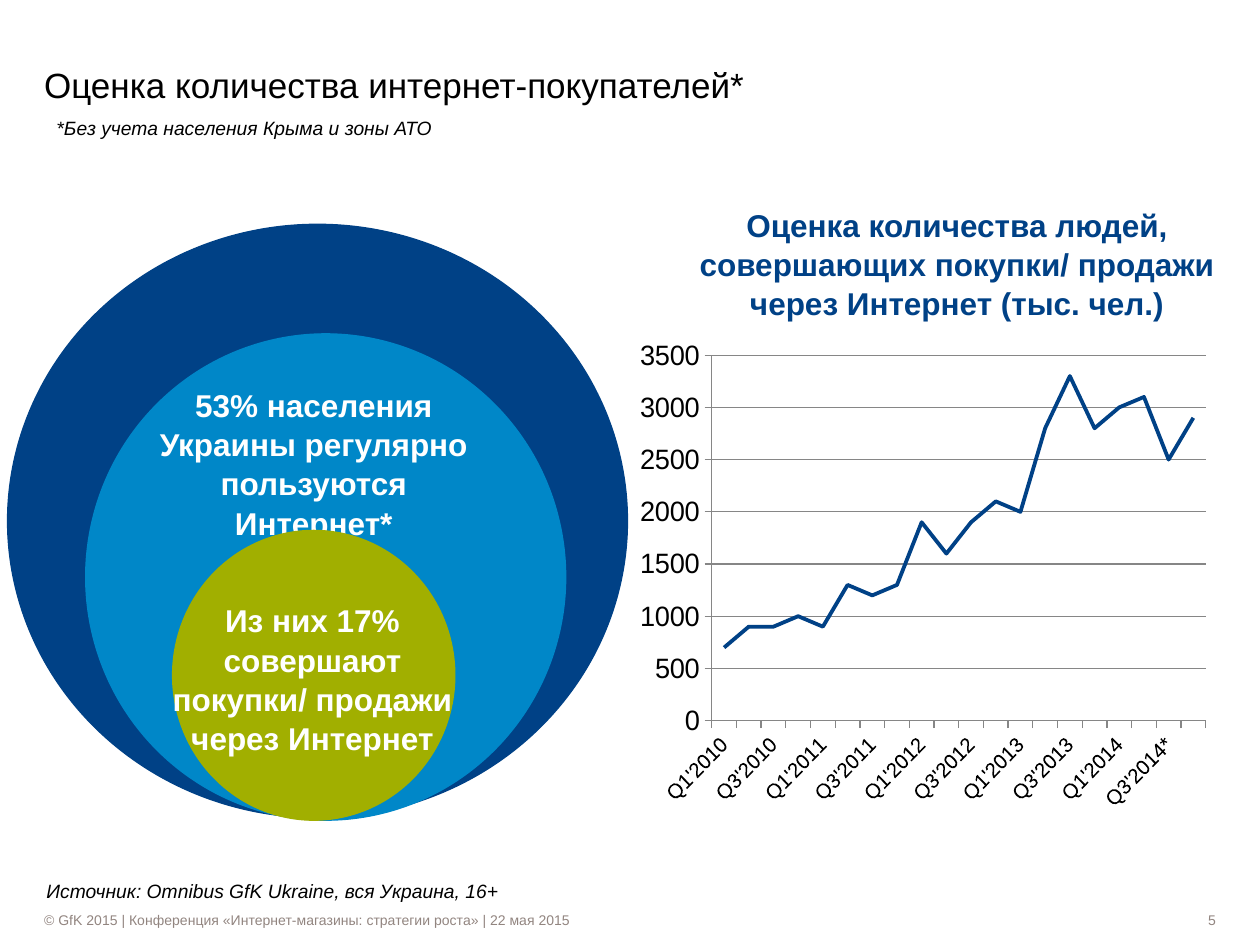
import pptx
import pptx.chart.data
import pptx.dml.color
import pptx.enum.chart
import pptx.enum.shapes
import pptx.enum.text
import pptx.oxml
import pptx.oxml.ns
import pptx.util
from pptx.util import Inches

RGBColor = pptx.dml.color.RGBColor
NAVY = RGBColor(0x00, 0x41, 0x86)
BLUE = RGBColor(0x00, 0x87, 0xC8)
GREEN = RGBColor(0xA1, 0xAF, 0x00)
GREY = RGBColor(0x92, 0x85, 0x80)
AXIS_GREY = RGBColor(0x86, 0x86, 0x86)
BLACK = RGBColor(0, 0, 0)
WHITE = RGBColor(0xFF, 0xFF, 0xFF)

ALIGN = pptx.enum.text.PP_ALIGN
ANCHOR = pptx.enum.text.MSO_ANCHOR

BUYERS = [700, 900, 900, 1000, 900, 1300, 1200, 1300, 1900, 1600,
          1900, 2100, 2000, 2800, 3300, 2800, 3000, 3100, 2500, 2900]
MARKED_QUARTERS = ("Q2'2014", "Q3'2014", "Q4'2014")


def set_font(font, size, color):
    font.name = "Arial"
    font.size = pptx.util.Pt(size)
    font.color.rgb = color


def add_text(slide, box, text, size, color, align=ALIGN.LEFT, anchor=ANCHOR.TOP,
             bold=False, italic=False, margins=(0, 0), line_spacing=None):
    shape = slide.shapes.add_textbox(*map(Inches, box))
    frame = shape.text_frame
    frame.word_wrap = True
    frame.vertical_anchor = anchor
    frame.margin_left = frame.margin_right = Inches(margins[0])
    frame.margin_top = frame.margin_bottom = Inches(margins[1])
    paragraph = frame.paragraphs[0]
    paragraph.text = text
    paragraph.alignment = align
    paragraph.line_spacing = line_spacing
    set_font(paragraph.font, size, color)
    paragraph.font.bold = bold
    paragraph.font.italic = italic


def add_heading(slide, box, text, color):
    add_text(slide, box, text, 18, color, ALIGN.CENTER, bold=True, line_spacing=1.04)


def add_note(slide, box, text):
    add_text(slide, box, text, 11, BLACK, italic=True, margins=(0.1, 0.05))


def add_circle(slide, box, color):
    shape = slide.shapes.add_shape(pptx.enum.shapes.MSO_SHAPE.OVAL, *map(Inches, box))
    shape.shadow.inherit = False
    shape.fill.solid()
    shape.fill.fore_color.rgb = color
    shape.line.color.rgb = color
    shape.line.width = pptx.util.Pt(0.75)


def style_axis(axis, size):
    axis.major_tick_mark = pptx.enum.chart.XL_TICK_MARK.OUTSIDE
    axis.minor_tick_mark = pptx.enum.chart.XL_TICK_MARK.NONE
    axis.format.line.color.rgb = AXIS_GREY
    set_font(axis.tick_labels.font, size, BLACK)


def set_plot_layout(chart, left, top, width, height):
    namespace = pptx.oxml.ns.nsdecls("c")
    layout = pptx.oxml.parse_xml(
        f'<c:layout {namespace}><c:manualLayout><c:layoutTarget val="inner"/>'
        '<c:xMode val="edge"/><c:yMode val="edge"/>'
        f'<c:x val="{left}"/><c:y val="{top}"/><c:w val="{width}"/><c:h val="{height}"/>'
        '</c:manualLayout></c:layout>')
    plot_area = chart._chartSpace.chart.plotArea
    for existing in plot_area.findall(pptx.oxml.ns.qn("c:layout")):
        plot_area.remove(existing)
    plot_area.insert(0, layout)


def label_every_second_category(axis):
    skip = pptx.oxml.parse_xml(
        f'<c:tickLblSkip {pptx.oxml.ns.nsdecls("c")} val="2"/>')
    axis._element.find(pptx.oxml.ns.qn("c:noMultiLvlLbl")).addprevious(skip)
    body = axis._element.find(pptx.oxml.ns.qn("c:txPr")).find(pptx.oxml.ns.qn("a:bodyPr"))
    body.set("rot", "-2700000")
    body.set("vert", "horz")


def add_buyers_chart(slide, box):
    data = pptx.chart.data.CategoryChartData()
    quarters = [f"Q{quarter}'{year}" for year in range(2010, 2015) for quarter in range(1, 5)]
    data.categories = [name + "*" if name in MARKED_QUARTERS else name for name in quarters]
    data.add_series("Series 1", BUYERS)
    chart = slide.shapes.add_chart(
        pptx.enum.chart.XL_CHART_TYPE.LINE, *map(Inches, box), data).chart
    chart.has_legend = False
    chart.has_title = False
    set_font(chart.font, 18, BLACK)
    chart.plots[0].vary_by_categories = False
    series = chart.plots[0].series[0]
    series.smooth = False
    series.marker.style = pptx.enum.chart.XL_MARKER_STYLE.NONE
    series.format.line.color.rgb = NAVY
    series.format.line.width = pptx.util.Pt(2.25)

    style_axis(chart.category_axis, 12)
    label_every_second_category(chart.category_axis)
    value_axis = chart.value_axis
    style_axis(value_axis, 16)
    value_axis.minimum_scale = 0
    value_axis.maximum_scale = 3500
    value_axis.major_unit = 500
    value_axis.has_major_gridlines = True
    value_axis.major_gridlines.format.line.color.rgb = AXIS_GREY
    set_plot_layout(chart, 0.09, 0.065, 0.82, 0.652)


def main():
    presentation = pptx.Presentation()
    presentation.slide_width = Inches(10)
    presentation.slide_height = Inches(7.5)
    slide = presentation.slides.add_slide(presentation.slide_layouts[6])

    add_text(slide, (0.35, 7.22, 7.72, 0.16),
             "© GfK 2015 | Конференция «Интернет-магазины: стратегии роста» | 22 мая 2015",
             8, GREY, anchor=ANCHOR.MIDDLE)
    add_text(slide, (8.23, 7.22, 1.42, 0.16), "5", 8, GREY, ALIGN.RIGHT, ANCHOR.MIDDLE)
    add_text(slide, (0.35, 0.13, 6.93, 0.71), "Оценка количества интернет-покупателей*",
             20, BLACK, anchor=ANCHOR.BOTTOM)

    add_buyers_chart(slide, (5.08, 2.53, 4.92, 4.45))
    add_heading(slide, (5.47, 1.62, 4.25, 0.91),
                "Оценка количества людей, совершающих покупки/ продажи через Интернет (тыс. чел.)",
                NAVY)

    add_circle(slide, (0.06, 1.78, 4.92, 4.71), NAVY)
    add_circle(slide, (0.68, 2.65, 3.81, 3.86), BLUE)
    add_heading(slide, (1.15, 3.05, 2.68, 1.21),
                "53% населения Украины регулярно пользуются Интернет*", WHITE)
    add_circle(slide, (1.37, 4.21, 2.24, 2.3), GREEN)
    add_heading(slide, (1.28, 4.76, 2.4, 1.21),
                "Из них 17% совершают покупки/ продажи через Интернет", WHITE)

    add_note(slide, (0.27, 6.93, 7.02, 0.29), "Источник: Omnibus GfK Ukraine, вся Украина, 16+")
    add_note(slide, (0.35, 0.87, 4.03, 0.29), "*Без учета населения Крыма и зоны АТО")
    presentation.save("out.pptx")


if __name__ == "__main__":
    main()
